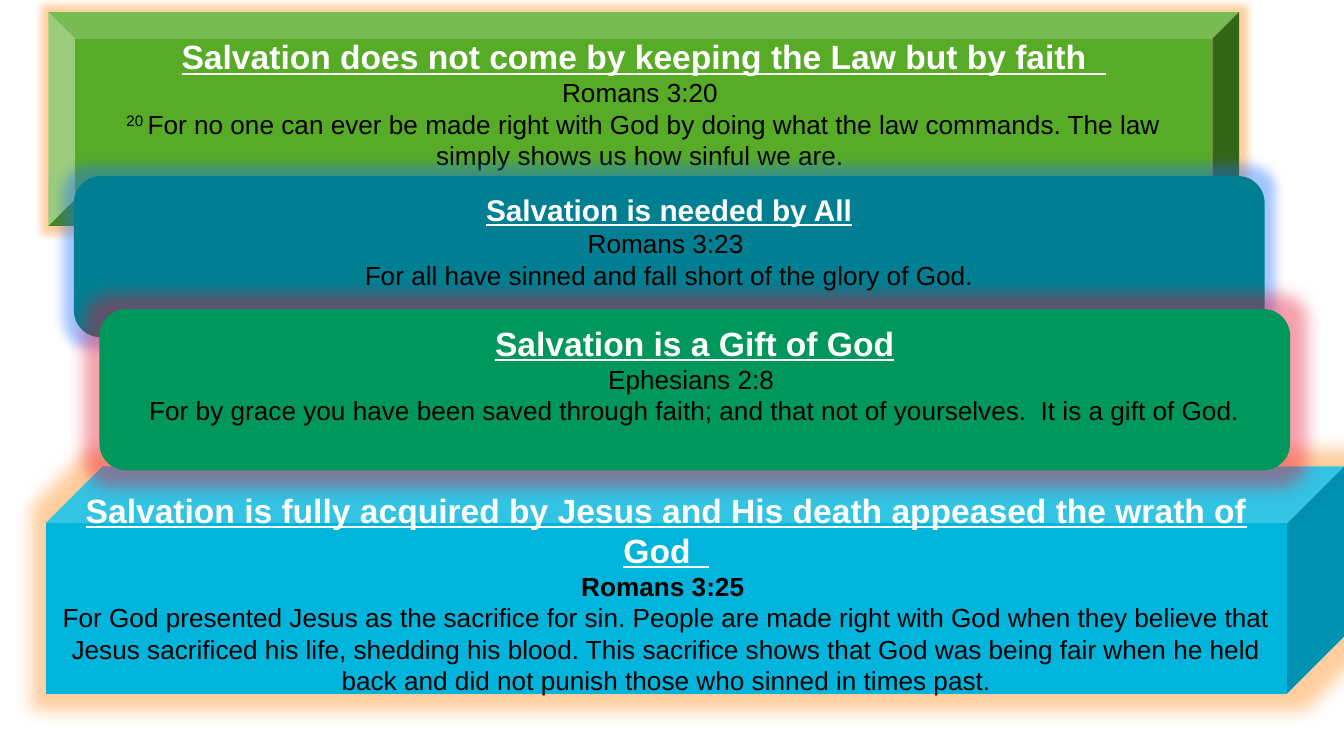
from lxml import etree
from pptx import Presentation
from pptx.dml.color import RGBColor
from pptx.enum.shapes import MSO_SHAPE
from pptx.enum.text import MSO_ANCHOR, PP_ALIGN
from pptx.oxml.ns import qn
from pptx.util import Inches, Pt

WHITE = RGBColor(0xFF, 0xFF, 0xFF)
BLACK = RGBColor(0x00, 0x00, 0x00)
LIME = RGBColor(0x57, 0xAB, 0x27)
CYAN = RGBColor(0x00, 0xB4, 0xDC)
TEAL = RGBColor(0x00, 0x7F, 0x92)
GREEN = RGBColor(0x00, 0x97, 0x5D)
ORANGE_GLOW = RGBColor(0xFF, 0x85, 0x0D)
BLUE_GLOW = RGBColor(0x1A, 0x6C, 0xFF)
RED_GLOW = RGBColor(0xEB, 0x10, 0x30)


def add_text(p, text, size=14, color=BLACK, bold=False, underline=False, raised=False):
    r = p.add_run()
    r.text = text
    r.font.name = "Arial"
    r.font.size = Pt(size)
    r.font.color.rgb = color
    r.font.bold = bold
    r.font.underline = underline
    if raised:
        r.font._element.set("baseline", "30000")


class SlideBuilder:
    def __init__(self, slide):
        self.slide = slide

    def glow(self, sp, color, radius):
        effects = sp._element.spPr.find(qn("a:effectLst"))
        glow = etree.SubElement(effects, qn("a:glow"), rad=str(Pt(radius)))
        clr = etree.SubElement(glow, qn("a:srgbClr"), val=str(color))
        etree.SubElement(clr, qn("a:alpha"), val="40000")

    def panel(self, kind, box, fill, glow_color, glow_radius):
        sp = self.slide.shapes.add_shape(kind, *map(Inches, box))
        sp.shadow.inherit = False
        sp.fill.solid()
        sp.fill.fore_color.rgb = fill
        sp.line.fill.background()
        self.glow(sp, glow_color, glow_radius)
        return sp

    def verse(self, sp, title, reference, text, title_size=18, number=None, bold_ref=False):
        """Write a heading, a Bible reference and its verse, raised above centre."""
        tf = sp.text_frame
        tf.word_wrap = True
        tf.vertical_anchor = MSO_ANCHOR.MIDDLE
        tf.margin_bottom = Inches(0.28)
        heading, ref, body = tf.paragraphs[0], tf.add_paragraph(), tf.add_paragraph()
        for p in (heading, ref, body):
            p.alignment = PP_ALIGN.CENTER
        add_text(heading, title, size=title_size, color=WHITE, bold=True, underline=True)
        add_text(ref, reference, bold=bold_ref)
        if number:
            add_text(body, number, raised=True)
        add_text(body, text)


def main():
    prs = Presentation()
    prs.slide_width = Inches(10)
    prs.slide_height = prs.slide_width * 9 // 16
    s = SlideBuilder(prs.slides.add_slide(prs.slide_layouts[6]))

    law = s.panel(MSO_SHAPE.BEVEL, (0.36, 0.09, 8.86, 1.59), LIME, ORANGE_GLOW, 8)
    s.verse(law, "Salvation does not come by keeping the Law but by faith  ", "Romans 3:20 ",
            "For no one can ever be made right with God by doing what the law commands. "
            "The law simply shows us how sinful we are. ", number="20\N{NO-BREAK SPACE}")

    sacrifice = s.panel(MSO_SHAPE.CUBE, (0.34, 3.47, 9.66, 1.69), CYAN, ORANGE_GLOW, 18)
    s.verse(sacrifice,
            "Salvation is fully acquired by Jesus and His death appeased the wrath of God  ",
            "Romans 3:25 ",
            "For God presented Jesus as the sacrifice for sin. People are made right with God "
            "when they believe that Jesus sacrificed his life, shedding his blood. This "
            "sacrifice shows that God was being fair when he held back and did not punish "
            "those who sinned in times past.", bold_ref=True)

    rounded = MSO_SHAPE.FLOWCHART_ALTERNATE_PROCESS
    need = s.panel(rounded, (0.55, 1.31, 8.86, 1.2), TEAL, BLUE_GLOW, 13)
    s.verse(need, "Salvation is needed by All", "Romans 3:23 ",
            "For all have sinned and fall short of the glory of God.", title_size=16)

    gift = s.panel(rounded, (0.74, 2.3, 8.86, 1.2), GREEN, RED_GLOW, 18)
    s.verse(gift, "Salvation is a Gift of God", "Ephesians 2:8 ",
            "For by grace you have been saved through faith; and that not of yourselves.  "
            "It is a gift of God.")

    prs.save("out.pptx")


if __name__ == "__main__":
    main()
